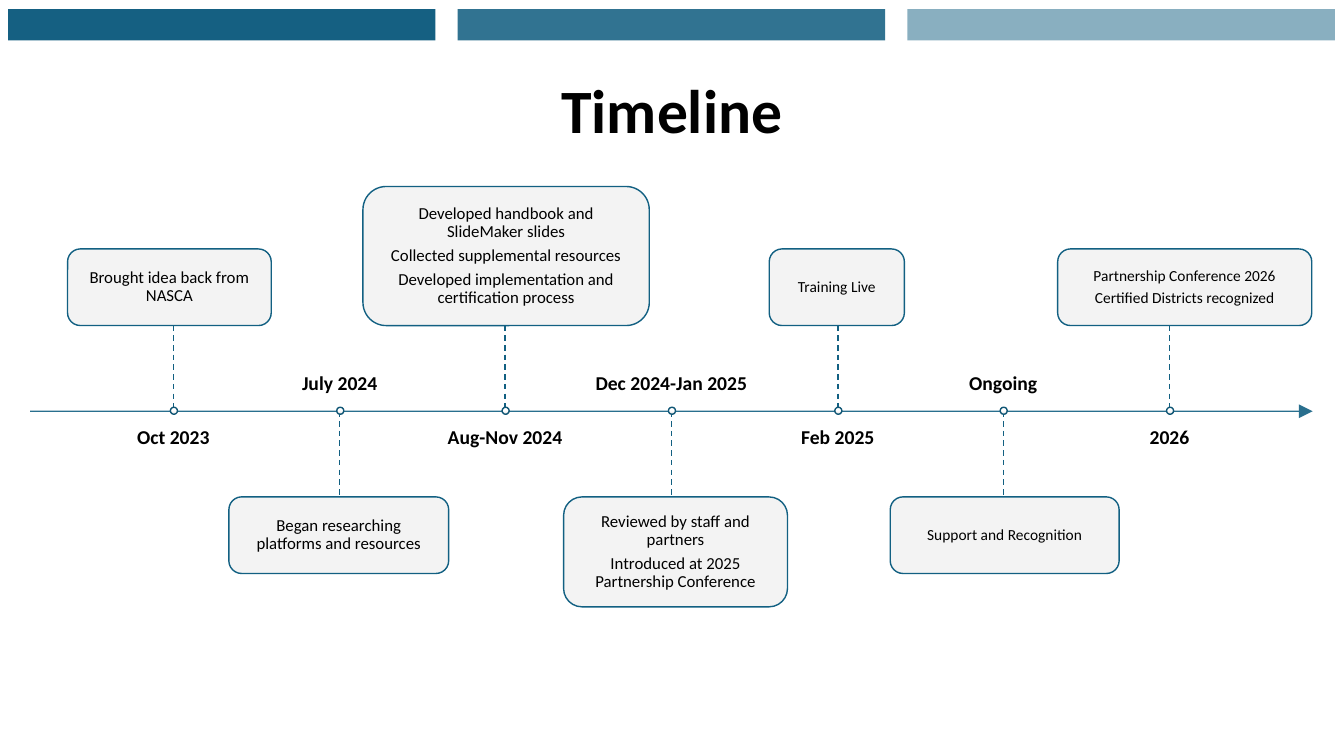
from dataclasses import dataclass

from lxml.etree import SubElement
from pptx import Presentation
from pptx.dml.color import RGBColor
from pptx.enum.dml import MSO_LINE_DASH_STYLE as Dash
from pptx.enum.shapes import MSO_CONNECTOR as Connector, MSO_SHAPE as Shape
from pptx.enum.text import MSO_ANCHOR as Anchor, MSO_AUTO_SIZE as AutoSize, PP_ALIGN as Align
from pptx.oxml.ns import qn
from pptx.util import Emu, Pt

PX = 9144  # 100 px to the inch
COLORS = {"bar": "156082", "line": "126082", "ring": "105675", "card": "F2F2F2",
          "text": "000000", "white": "FFFFFF", "shade": "E1E1E1"}
AXIS_Y, FIRST_X, LAST_X = 408, 172, 1160
CARD_GAP = 85
LABEL_W, LABEL_H, LABEL_GAP = 250, 50, 16
DOT = 7


@dataclass
class Milestone:
    date: str
    left: int
    width: int
    height: int
    size: int
    lines: list[str]


MILESTONES = [
    Milestone("Oct 2023", 67, 202, 76, 12, ["Brought idea back from NASCA"]),
    Milestone("July 2024", 227, 218, 76, 12, ["Began researching platforms and resources"]),
    Milestone("Aug-Nov 2024", 360, 284, 138, 12,
              ["Developed handbook and SlideMaker slides", "Collected supplemental resources",
               "Developed implementation and certification process"]),
    Milestone("Dec 2024-Jan 2025", 559, 222, 109, 12,
              ["Reviewed by staff and partners", "Introduced at 2025 Partnership Conference"]),
    Milestone("Feb 2025", 763, 134, 76, 11, ["Training Live"]),
    Milestone("Ongoing", 883, 227, 76, 11, ["Support and Recognition"]),
    Milestone("2026", 1049, 252, 76, 11,
              ["Partnership Conference 2026", "Certified Districts recognized"]),
]


def px(*lengths: int) -> list[Emu]:
    return [Emu(length * PX) for length in lengths]


def rgb(name: str) -> RGBColor:
    return RGBColor.from_string(COLORS[name])


def set_alpha(color_parent, percent: int) -> None:
    color = color_parent.find(".//" + qn("a:srgbClr"))
    SubElement(color, qn("a:alpha"), val=str(percent * 1000))


def write(shape, lines: list[str], size: int, bold: bool, anchor: Anchor, padding: int) -> None:
    frame = shape.text_frame
    margin = Emu(padding * PX)
    layout = {"word_wrap": True, "auto_size": AutoSize.NONE, "vertical_anchor": anchor,
              "margin_left": margin, "margin_right": margin,
              "margin_top": margin, "margin_bottom": margin}
    for name, value in layout.items():
        setattr(frame, name, value)
    for index, line in enumerate(lines):
        para = frame.add_paragraph() if index else frame.paragraphs[0]
        para.alignment = Align.CENTER
        para.line_spacing = 0.9
        para.space_before = Pt(size * 0.35 if index else 0)
        span = para.add_run()
        span.text = line
        for name, value in {"name": "Calibri", "size": Pt(size), "bold": bold}.items():
            setattr(span.font, name, value)
        span.font.color.rgb = rgb("text")


def add_block(page, kind: Shape, box: tuple[int, ...], fill: str, alpha: int):
    shape = page.shapes.add_shape(kind, *px(*box))
    shape.shadow.inherit = False
    shape.fill.solid()
    shape.fill.fore_color.rgb = rgb(fill)
    set_alpha(shape.fill._xPr, alpha)
    return shape


def add_line(page, x1: int, y1: int, x2: int, y2: int):
    line = page.shapes.add_connector(Connector.STRAIGHT, *px(x1, y1, x2, y2))
    line.line.color.rgb = rgb("line")
    line.line.width = Pt(1)
    SubElement(line._element.spPr, qn("a:effectLst"))
    return line


def add_dot(page, x: int) -> None:
    dot = page.shapes.add_shape(Shape.OVAL, *px(x - DOT // 2, AXIS_Y - 4, DOT, DOT))
    dot.shadow.inherit = False
    dot.fill.gradient()
    dot.fill.gradient_angle = 270
    for stop, color, position in zip(dot.fill.gradient_stops, ("white", "shade"), (0.5, 1)):
        stop.color.rgb = rgb(color)
        stop.position = position
    dot.line.color.rgb = rgb("ring")
    dot.line.width = Pt(1)


def add_milestone(page, milestone: Milestone, x: int, card_above: bool) -> None:
    # Card and its dashed stem
    edge = AXIS_Y - CARD_GAP if card_above else AXIS_Y + CARD_GAP
    top = edge - milestone.height if card_above else edge
    card = add_block(page, Shape.ROUNDED_RECTANGLE,
                     (milestone.left, top, milestone.width, milestone.height), "card", 90)
    card.line.color.rgb = rgb("line")
    card.line.width = Pt(1)
    write(card, milestone.lines, milestone.size, False, Anchor.MIDDLE, milestone.size)
    stem = add_line(page, x, min(edge, AXIS_Y), x, max(edge, AXIS_Y))
    stem.line.dash_style = Dash.DASH

    # Date on the other side of the axis
    label_top = AXIS_Y + LABEL_GAP if card_above else AXIS_Y - LABEL_GAP - LABEL_H
    label = page.shapes.add_textbox(*px(x - LABEL_W // 2, label_top, LABEL_W, LABEL_H))
    write(label, [milestone.date], 14, True, Anchor.TOP if card_above else Anchor.BOTTOM, 0)
    add_dot(page, x)


def main() -> None:
    deck = Presentation()
    deck.slide_width, deck.slide_height = px(1333, 750)
    page = deck.slides.add_slide(deck.slide_layouts[5])

    # Header bars
    for index, alpha in enumerate((100, 88, 50)):
        bar = add_block(page, Shape.RECTANGLE, (8 + 446 * index, 9, 424, 31), "bar", alpha)
        bar.line.fill.background()

    # Title
    title = page.shapes.title
    title.left, title.top, title.width, title.height = px(10, 40, 1313, 145)
    write(title, ["Timeline"], 44, True, Anchor.MIDDLE, 5)

    # Time axis
    axis = add_line(page, 30, AXIS_Y, 1302, AXIS_Y)
    outline = axis.line._get_or_add_ln()
    set_alpha(outline, 90)
    SubElement(outline, qn("a:tailEnd"), type="triangle", w="lg", len="lg")

    # Milestones, cards alternating above and below
    step = (LAST_X - FIRST_X) / (len(MILESTONES) - 1)
    for index, milestone in enumerate(MILESTONES):
        add_milestone(page, milestone, round(FIRST_X + step * index), index % 2 == 0)

    deck.save("out.pptx")


if __name__ == "__main__":
    main()
